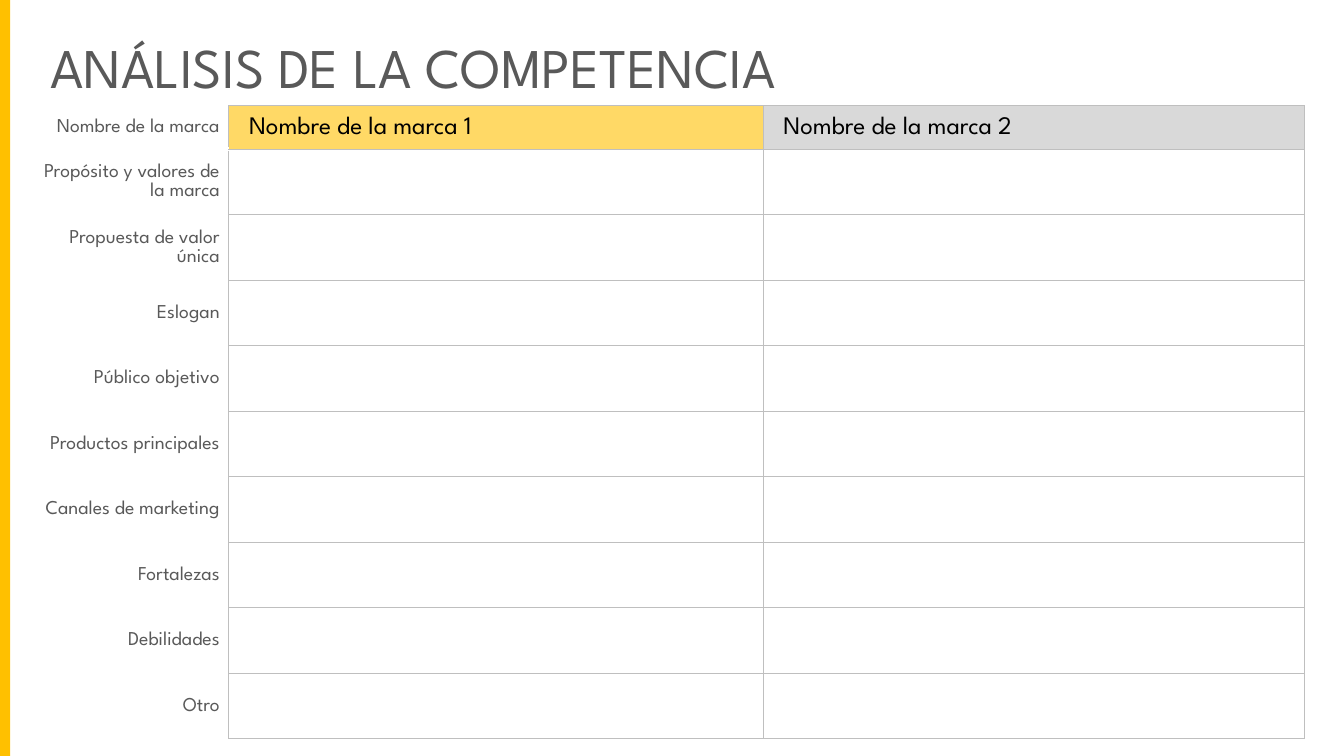
from lxml import etree
from pptx import Presentation
from pptx.dml.color import RGBColor
from pptx.enum.shapes import MSO_SHAPE
from pptx.enum.text import MSO_ANCHOR, MSO_AUTO_SIZE, PP_ALIGN
from pptx.oxml.ns import qn
from pptx.util import Inches, Pt

RECTANGLE = MSO_SHAPE.RECTANGLE
TOP, MIDDLE = MSO_ANCHOR.TOP, MSO_ANCHOR.MIDDLE
LEFT, RIGHT = PP_ALIGN.LEFT, PP_ALIGN.RIGHT
NO_AUTOFIT = MSO_AUTO_SIZE.NONE
TITLE_ONLY = 5

FONT = "League Spartan"
GREY_TEXT, BLACK, WHITE = "595959", "000000", "FFFFFF"
GRID, AMBER = "BFBFBF", "FFC000"
COLUMN_WIDTHS = [2.06, 5.3, 5.37]
HEADER_HEIGHT, ROW_HEIGHT = 0.43, 0.65
BRANDS = [("Nombre de la marca 1", "FFD966"), ("Nombre de la marca 2", "D9D9D9")]
LABELS = [
    "Nombre de la marca",
    "Propósito y valores de la marca",
    "Propuesta de valor única",
    "Eslogan",
    "Público objetivo",
    "Productos principales",
    "Canales de marketing",
    "Fortalezas",
    "Debilidades",
    "Otro",
]


def paint(color_format, color):
    """Give a colour format a hex colour."""
    color_format.rgb = RGBColor.from_string(color)


def style_paragraph(para, size, color, align=LEFT, spacing=1.0):
    """Set the font, colour, alignment and line spacing of a paragraph."""
    para.font.name = FONT
    para.font.size = Pt(size)
    paint(para.font.color, color)
    para.alignment = align
    para.line_spacing = spacing


def add_title(page, text):
    """Place and format the slide title."""
    title = page.shapes.title
    title.left, title.top = Inches(0.4), Inches(0.27)
    title.width, title.height = Inches(10.52), Inches(0.77)
    frame = title.text_frame
    frame.text = text
    frame.word_wrap = True
    frame.auto_size = NO_AUTOFIT
    frame.vertical_anchor = TOP
    style_paragraph(frame.paragraphs[0], 40, GREY_TEXT)


def add_side_bar(page, height):
    """Draw the coloured bar along the left edge."""
    bar = page.shapes.add_shape(RECTANGLE, 0, 0, Inches(0.1), height)
    bar.shadow.inherit = False
    bar.fill.solid()
    paint(bar.fill.fore_color, AMBER)
    bar.line.fill.background()


def set_borders(cell, left=GRID, right=GRID, top=GRID, bottom=GRID, bottom_width=1):
    """Draw the four borders of a table cell."""
    properties = cell._tc.get_or_add_tcPr()
    sides = [("L", left, 1), ("R", right, 1), ("T", top, 1), ("B", bottom, bottom_width)]
    for side, color, width in sides:
        line = etree.SubElement(properties, qn(f"a:ln{side}"), w=str(Pt(width)))
        fill = etree.SubElement(line, qn("a:solidFill"))
        etree.SubElement(fill, qn("a:srgbClr"), val=color)


def set_fill(cell, color=None):
    """Fill a cell, or leave it clear when there is no colour."""
    if color:
        cell.fill.solid()
        paint(cell.fill.fore_color, color)
    else:
        cell.fill.background()


def write_cell(cell, text, size, color, align, margins):
    """Write formatted text into a cell."""
    cell.text = text
    cell.vertical_anchor = MIDDLE
    cell.margin_left, cell.margin_right = map(Inches, margins)
    cell.margin_top = cell.margin_bottom = 0
    style_paragraph(cell.text_frame.paragraphs[0], size, color, align, 1.07)


def add_comparison_table(page):
    """Build the table with one row per topic and one column per brand."""
    height = HEADER_HEIGHT + ROW_HEIGHT * (len(LABELS) - 1)
    table = page.shapes.add_table(
        len(LABELS), len(COLUMN_WIDTHS), Inches(0.21), Inches(1.05),
        Inches(sum(COLUMN_WIDTHS)), Inches(height),
    ).table
    table.first_row = table.horz_banding = False
    for column, width in zip(table.columns, COLUMN_WIDTHS):
        column.width = Inches(width)

    for index, label in enumerate(LABELS):
        is_header = index == 0
        table.rows[index].height = Inches(HEADER_HEIGHT if is_header else ROW_HEIGHT)
        label_cell = table.cell(index, 0)
        set_borders(label_cell, left=WHITE, top=WHITE, bottom=WHITE,
                    bottom_width=3 if is_header else 1)
        set_fill(label_cell)
        write_cell(label_cell, label, 14, GREY_TEXT, RIGHT, (0.07, 0.09))
        for position, (brand, color) in enumerate(BRANDS, start=1):
            cell = table.cell(index, position)
            set_borders(cell)
            set_fill(cell, color if is_header else None)
            if is_header:
                write_cell(cell, brand, 18, BLACK, LEFT, (0.2, 0.06))


def main():
    """Build the competitor analysis slide and save it."""
    deck = Presentation()
    deck.slide_width, deck.slide_height = Inches(13.33), Inches(7.5)
    page = deck.slides.add_slide(deck.slide_layouts[TITLE_ONLY])
    add_title(page, "ANÁLISIS DE LA COMPETENCIA")
    add_side_bar(page, deck.slide_height)
    add_comparison_table(page)
    deck.save("out.pptx")


if __name__ == "__main__":
    main()
